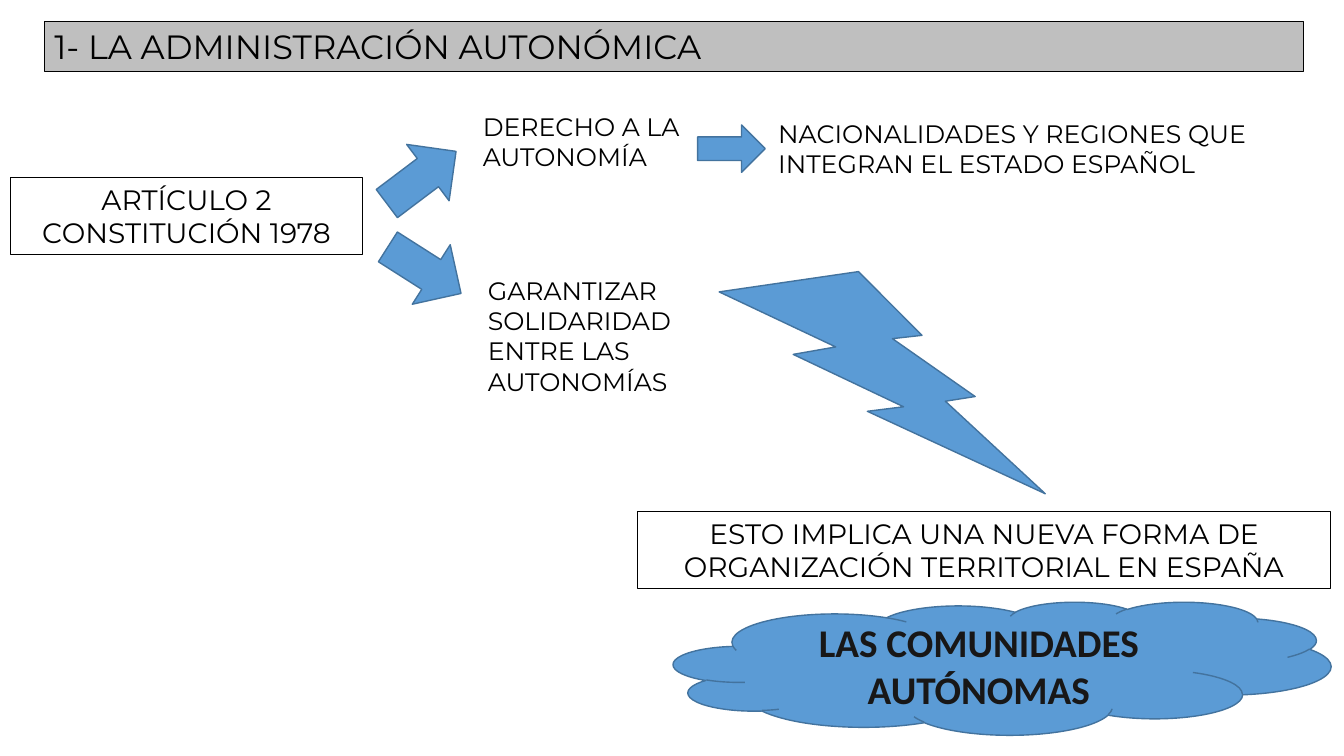
import pptx
import pptx.dml.color
import pptx.enum.shapes
import pptx.enum.text
import pptx.util

Inches = pptx.util.Inches
Pt = pptx.util.Pt
RGBColor = pptx.dml.color.RGBColor
Shape = pptx.enum.shapes.MSO_SHAPE
Align = pptx.enum.text.PP_ALIGN
Anchor = pptx.enum.text.MSO_ANCHOR
AutoSize = pptx.enum.text.MSO_AUTO_SIZE

theme = {
    "black": RGBColor.from_string("000000"),
    "ink": RGBColor.from_string("181717"),
    "gray": RGBColor.from_string("BFBFBF"),
    "blue": RGBColor.from_string("5B9BD5"),
    "blue_line": RGBColor.from_string("43739E"),
    "title": Pt(24),
    "box": Pt(20),
    "label": Pt(18),
    "cloud": Pt(28),
}


def add_figure(kind, bounds, fill, line, width, rotation=0):
    shape = slide.shapes.add_shape(kind, *map(Inches, bounds))
    shape.shadow.inherit = False
    shape.rotation = rotation
    if fill:
        shape.fill.solid()
        shape.fill.fore_color.rgb = theme[fill]
    else:
        shape.fill.background()
    shape.line.color.rgb = theme[line]
    shape.line.width = Pt(width)
    return shape


def write(shape, text, size, align=Align.LEFT, anchor=Anchor.TOP,
          auto_size=AutoSize.SHAPE_TO_FIT_TEXT, color="black", **font_format):
    frame = shape.text_frame
    frame.word_wrap = True
    frame.auto_size = auto_size
    frame.vertical_anchor = anchor
    paragraph = frame.paragraphs[0]
    paragraph.alignment = align
    run = paragraph.add_run()
    run.text = text
    run.font.color.rgb = theme[color]
    for name, value in {"name": "Montserrat", "size": theme[size], **font_format}.items():
        setattr(run.font, name, value)


presentation = pptx.Presentation()
presentation.slide_width = Inches(13.33)
presentation.slide_height = Inches(7.5)
slide = presentation.slides.add_slide(presentation.slide_layouts[6])

# Outlined boxes: article, title bar and consequence
boxes = [
    ((0.1, 1.76, 3.5, 0.77), None, "ARTÍCULO 2 CONSTITUCIÓN 1978", "box", Align.CENTER),
    ((0.44, 0.21, 12.49, 0.5), "gray", "1- LA ADMINISTRACIÓN AUTONÓMICA", "title", Align.LEFT),
    ((6.32, 5.07, 6.88, 0.77), None,
     "ESTO IMPLICA UNA NUEVA FORMA DE ORGANIZACIÓN TERRITORIAL EN ESPAÑA", "box", Align.CENTER),
]
for bounds, fill, text, size, align in boxes:
    box = add_figure(Shape.RECTANGLE, bounds, fill, "black", 0.75)
    write(box, text, size, align)

# Block arrows and lightning bolt
symbols = [
    (Shape.DOWN_ARROW, (3.86, 2.25, 0.7, 0.86), 302.5),
    (Shape.DOWN_ARROW, (3.83, 1.33, 0.7, 0.86), 233),
    (Shape.DOWN_ARROW, (7.02, 1.14, 0.47, 0.67), 270),
    (Shape.LIGHTNING_BOLT, (7.05, 2.73, 3.44, 1.98), 6.5),
]
for kind, bounds, rotation in symbols:
    add_figure(kind, bounds, "blue", "blue_line", 1, rotation)

# Rights and duties set out by the article
labels = [
    ((4.69, 1.05, 2.31, 0.71), "DERECHO A LA AUTONOMÍA"),
    ((7.62, 1.12, 5.31, 1.01), "NACIONALIDADES Y REGIONES QUE INTEGRAN EL ESTADO ESPAÑOL"),
    ((4.74, 2.68, 2.31, 1.31), "GARANTIZAR SOLIDARIDAD ENTRE LAS AUTONOMÍAS"),
]
for bounds, text in labels:
    write(slide.shapes.add_textbox(*map(Inches, bounds)), text, "label")

# Conclusion cloud
cloud = add_figure(Shape.CLOUD, (6.68, 5.97, 6.52, 1.32), "blue", "blue_line", 1)
write(cloud, "LAS COMUNIDADES AUTÓNOMAS", "cloud", Align.CENTER, Anchor.MIDDLE,
      AutoSize.NONE, "ink", name="Calibri", bold=True)

presentation.save("out.pptx")
